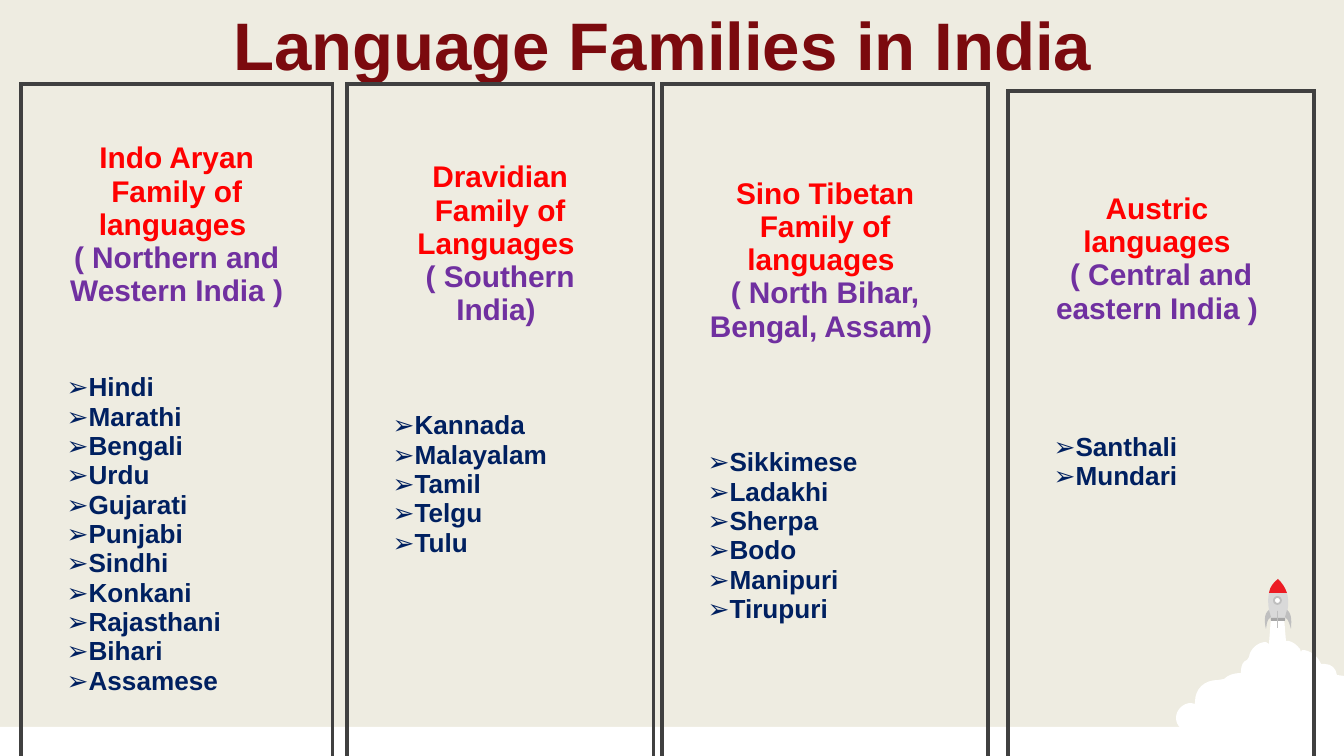
from lxml.etree import SubElement
from pptx import Presentation
from pptx.dml.color import RGBColor
from pptx.enum.shapes import MSO_SHAPE as Shape
from pptx.enum.text import MSO_ANCHOR as Anchor, PP_ALIGN as Align
from pptx.oxml.ns import qn
from pptx.util import Pt

PX = 914400 / 134.4
WIDTH, HEIGHT = 1344, 756
SIDE = 31
MAROON = RGBColor(0x7B, 0x0A, 0x0E)
RED = RGBColor(0xFF, 0x00, 0x00)
PURPLE = RGBColor(0x70, 0x30, 0xA0)
NAVY = RGBColor(0x00, 0x20, 0x60)
CREAM = RGBColor(0xEE, 0xEC, 0xE1)
WHITE = RGBColor(0xFF, 0xFF, 0xFF)
PALE = RGBColor(0xD9, 0xD9, 0xD9)
SILVER = RGBColor(0xBF, 0xBF, 0xBF)
GRAY = RGBColor(0xA6, 0xA6, 0xA6)
NOSE = RGBColor(0xED, 0x1C, 0x24)
BORDER = RGBColor(0x40, 0x40, 0x40)

TITLE = "Language Families in India "
TITLE_FORMAT = {"name": "Arial", "size": Pt(36), "bold": True}
HEADING_FORMAT = {"name": "Arial", "size": Pt(16), "bold": True}
LIST_FORMAT = {"name": "Arial", "size": Pt(14), "bold": True}

FAMILIES = [
    {"family": "Indo Aryan Family of languages ", "region": "( Northern and Western India ) ",
     "languages": ["Hindi", "Marathi", "Bengali", "Urdu", "Gujarati", "Punjabi", "Sindhi",
                   "Konkani", "Rajasthani", "Bihari", "Assamese"],
     "at": (21, 84), "width": 309, "rows": (49, 184, 50, 359, 51)},
    {"family": "Dravidian Family of Languages ", "region": "( Southern India) ",
     "languages": ["Kannada", "Malayalam", "Tamil", "Telgu", "Tulu"],
     "at": (347, 84), "width": 304, "rows": (57, 206, 58, 349, 42)},
    {"family": "Sino Tibetan Family of languages ", "region": "( North Bihar, Bengal, Assam) ",
     "languages": ["Sikkimese", "Ladakhi", "Sherpa", "Bodo", "Manipuri", "Tirupuri"],
     "at": (662, 84), "width": 324, "rows": (57, 239, 62, 340, 42)},
    {"family": "Austric  languages ", "region": "( Central and eastern India ) ",
     "languages": ["Santhali", "Mundari"],
     "at": (1008, 91), "width": 304, "rows": (51, 234, 51, 274, 60)},
]

CLOUD = [
    (1271, 617), (1284, 617), (1286, 641), (1289, 641),
    (1293, 642, 1297, 645, 1300, 649), (1301, 652), (1302, 650),
    (1310, 650, 1318, 656, 1321, 664), (1325, 664),
    (1331, 664, 1336, 668, 1337, 675), (1344, 676), (1344, 753), (1341, 753),
    (1336, 753, 1331, 751, 1327, 749), (1325, 747), (1324, 749),
    (1321, 750, 1318, 751, 1314, 751), (1310, 751, 1308, 749, 1305, 746), (1302, 746),
    (1300, 750, 1296, 751, 1290, 751), (1286, 751, 1282, 750, 1279, 747), (1275, 747),
    (1270, 751, 1263, 754, 1255, 754), (1241, 754, 1233, 747, 1227, 741),
    (1224, 743, 1219, 745, 1215, 743), (1210, 742, 1202, 739, 1200, 732), (1199, 731),
    (1198, 732, 1195, 732, 1191, 732), (1183, 732, 1176, 726, 1176, 718),
    (1176, 710, 1183, 703, 1191, 703), (1195, 704), (1195, 702),
    (1195, 689, 1204, 680, 1218, 680), (1224, 679),
    (1228, 675, 1234, 673, 1241, 673), (1241, 671),
    (1241, 666, 1243, 661, 1247, 660), (1249, 657),
    (1250, 649, 1258, 642, 1266, 642), (1269, 644),
]
HULL = [(1271, 621), (1269, 609, 1263, 591, 1278, 579), (1293, 593, 1288, 610, 1285, 621)]
TIP = [(1278, 579), (1282, 583, 1285, 587, 1287, 593), (1269, 593),
       (1270, 587, 1273, 583, 1278, 579)]
LEFT_FIN = [(1269, 610), (1271, 617), (1266, 620, 1267, 626, 1266, 629),
            (1265, 625, 1263, 614, 1269, 610)]
RIGHT_FIN = [(1287, 610), (1285, 617), (1289, 620, 1290, 626, 1291, 629),
             (1291, 625, 1293, 614, 1287, 610)]


def px(value):
    return round(value * PX)


def paint(shape, fill):
    shape.shadow.inherit = False
    shape.fill.solid()
    shape.fill.fore_color.rgb = fill
    shape.line.fill.background()


def add_preset(page, kind, place, fill):
    shape = page.shapes.add_shape(kind, *map(px, place))
    paint(shape, fill)
    return shape


def add_outline(page, steps, fill):
    anchors = [(px(step[-2]), px(step[-1])) for step in steps]
    builder = page.shapes.build_freeform(*anchors[0])
    builder.add_line_segments(anchors[1:], close=True)
    shape = builder.convert_to_shape()
    segments = list(shape._element.iter(qn("a:lnTo")))
    for step, segment in zip(steps[1:], segments):
        if len(step) == 6:
            curve = segment.makeelement(qn("a:cubicBezTo"))
            for x, y in zip(step[::2], step[1::2]):
                SubElement(curve, qn("a:pt"), x=str(px(x) - shape.left),
                           y=str(px(y) - shape.top))
            segment.getparent().replace(segment, curve)
    paint(shape, fill)


def write(para, text, style, color, align):
    para.alignment = align
    span = para.add_run()
    span.text = text
    for name, value in style.items():
        setattr(span.font, name, value)
    span.font.color.rgb = color


def set_borders(cell, drawn):
    props = cell._tc.get_or_add_tcPr()
    for side in "LRTB":
        line = SubElement(props, qn("a:ln" + side), w=str(Pt(2.25)))
        if side in drawn:
            fill = SubElement(line, qn("a:solidFill"))
            SubElement(fill, qn("a:srgbClr"), val=str(BORDER))
        else:
            SubElement(line, qn("a:noFill"))
    cell.fill.background()


def add_family(page, family):
    rows = family["rows"]
    columns = (SIDE, family["width"] - 2 * SIDE, SIDE)
    place = (*family["at"], sum(columns), sum(rows))
    table = page.shapes.add_table(len(rows), len(columns), *map(px, place)).table
    table.first_row = table.horz_banding = False
    for row, height in zip(table.rows, rows):
        row.height = px(height)
    for column, width in zip(table.columns, columns):
        column.width = px(width)
    for r in range(len(rows)):
        for c in range(len(columns)):
            edges = {"L": c == 0, "R": c == len(columns) - 1,
                     "T": r == 0, "B": r == len(rows) - 1}
            cell = table.cell(r, c)
            cell.margin_top = cell.margin_bottom = px(6) if c == 1 and r in (1, 3) else 0
            set_borders(cell, [side for side, shown in edges.items() if shown])

    heading = table.cell(1, 1)
    heading.vertical_anchor = Anchor.MIDDLE
    frame = heading.text_frame
    write(frame.paragraphs[0], family["family"], HEADING_FORMAT, RED, Align.CENTER)
    write(frame.add_paragraph(), family["region"], HEADING_FORMAT, PURPLE, Align.CENTER)

    frame = table.cell(3, 1).text_frame
    for index, language in enumerate(family["languages"]):
        para = frame.add_paragraph() if index else frame.paragraphs[0]
        write(para, language, LIST_FORMAT, NAVY, Align.LEFT)
        props = para._p.get_or_add_pPr()
        SubElement(props, qn("a:buFont"), typeface="Arial")
        SubElement(props, qn("a:buChar"), char="➢")


def main():
    deck = Presentation()
    deck.slide_width, deck.slide_height = px(WIDTH), px(HEIGHT)
    page = deck.slides.add_slide(deck.slide_layouts[5])
    page.background.fill.solid()
    page.background.fill.fore_color.rgb = CREAM

    add_preset(page, Shape.RECTANGLE, (0, 727, WIDTH, HEIGHT - 727), WHITE)
    add_outline(page, CLOUD, WHITE)
    add_outline(page, HULL, PALE)
    add_preset(page, Shape.RECTANGLE, (1271, 618, 14, 3), GRAY)
    add_outline(page, TIP, NOSE)
    window = add_preset(page, Shape.OVAL, (1274, 597, 7, 7), WHITE)
    window.line.color.rgb = SILVER
    window.line.width = Pt(1)
    add_preset(page, Shape.RECTANGLE, (1277, 611, 1, 17), SILVER)
    add_outline(page, LEFT_FIN, SILVER)
    add_outline(page, RIGHT_FIN, SILVER)

    title = page.shapes.title
    title.left, title.top, title.width, title.height = map(px, (0, 7, WIDTH, 74))
    frame = title.text_frame
    frame.margin_top = frame.margin_bottom = 0
    frame.vertical_anchor = Anchor.MIDDLE
    write(frame.paragraphs[0], TITLE, TITLE_FORMAT, MAROON, Align.CENTER)

    for family in FAMILIES:
        add_family(page, family)
    deck.save("out.pptx")


if __name__ == "__main__":
    main()
